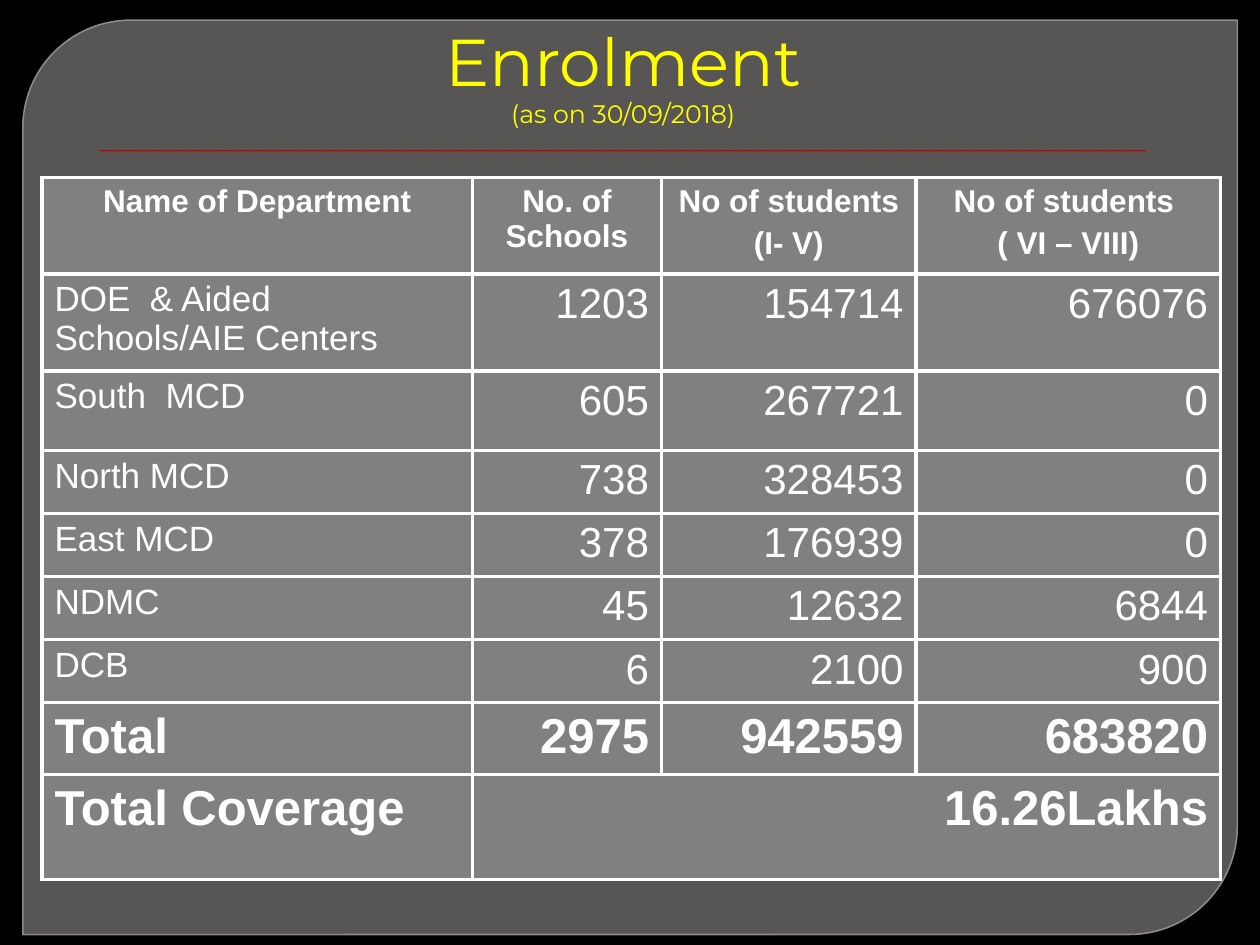
from lxml import etree
from pptx import Presentation
from pptx.dml.color import RGBColor
from pptx.enum import shapes as sh, text as tx
from pptx.oxml import ns
from pptx.util import Pt

BLACK = RGBColor(0, 0, 0)
WHITE = RGBColor(255, 255, 255)
YELLOW = RGBColor(255, 255, 0)
RED = RGBColor(0xC0, 0, 0)
GRAY = RGBColor(0x80, 0x80, 0x80)
PANEL = RGBColor(0x88, 0x84, 0x84)
EDGE = RGBColor(0x9D, 0x98, 0x98)

COLS = [246, 108, 145.5, 174]
ROWS = [55, 55.5, 45.5, 36, 36, 36, 36, 41, 60]
HEADS = ["Name of Department", "No. of Schools",
         "No of students\n(I- V)", "No of students \n( VI – VIII)"]
BODY = [
    ["DOE  & Aided Schools/AIE Centers", "1203", "154714", "676076"],
    ["South  MCD", "605", "267721", "0"],
    ["North MCD", "738", "328453", "0"],
    ["East MCD", "378", "176939", "0"],
    ["NDMC", "45", "12632", "6844"],
    ["DCB", "6", "2100", "900"],
]
TOTALS = [["Total", "2975", "942559", "683820"],
          ["Total Coverage", "16.26Lakhs", "", ""]]


def fade(fill, share):
    color = fill._xPr.find(".//" + ns.qn("a:srgbClr"))
    etree.SubElement(color, ns.qn("a:alpha"), val=str(share * 1000))


def style(font, size, color, name, bold=False):
    font.size = Pt(size)
    font.color.rgb = color
    font.name = name
    font.bold = bold


def add_panel(slide):
    panel = slide.shapes.add_shape(sh.MSO_SHAPE.ROUND_2_DIAG_RECTANGLE,
                                   Pt(13), Pt(11.5), Pt(694), Pt(522.5))
    panel.adjustments[0] = 0.118
    panel.adjustments[1] = 0
    panel.shadow.inherit = False
    panel.fill.solid()
    panel.fill.fore_color.rgb = PANEL
    fade(panel.fill, 65)
    panel.line.width = Pt(0.87)
    panel.line.color.rgb = EDGE
    fade(panel.line.fill, 88)


def add_title(slide):
    box = slide.shapes.add_textbox(Pt(30), Pt(24), Pt(648), Pt(68.5))
    frame = box.text_frame
    frame.word_wrap = True
    frame.vertical_anchor = tx.MSO_ANCHOR.BOTTOM
    para = frame.paragraphs[0]
    para.text = "Enrolment\v(as on 30/09/2018)\v" + "_" * 83
    para.alignment = tx.PP_ALIGN.CENTER
    para.line_spacing = 0.9
    para._p.get_or_add_pPr().set("marL", str(Pt(4.3)))
    looks = [(37.8, YELLOW), (14.4, YELLOW), (14.4, RED)]
    for run, (size, color) in zip(para.runs, looks):
        style(run.font, size, color, "Montserrat")
    for mark, (size, _) in zip(para._p.findall(ns.qn("a:br")), looks):
        etree.SubElement(mark, ns.qn("a:rPr"), sz=str(round(size * 100)))


def add_edges(cell):
    props = cell._tc.get_or_add_tcPr()
    for spot, side in enumerate(("lnL", "lnR", "lnT", "lnB")):
        line = etree.Element(ns.qn("a:" + side), w=str(Pt(2.25)))
        fill = etree.SubElement(line, ns.qn("a:solidFill"))
        etree.SubElement(fill, ns.qn("a:srgbClr"), val=str(WHITE))
        props.insert(spot, line)


def fill_cell(cell, words, size, bold, align):
    cell.fill.solid()
    cell.fill.fore_color.rgb = GRAY
    add_edges(cell)
    cell.text_frame.text = words
    for num, para in enumerate(cell.text_frame.paragraphs):
        para.alignment = align
        style(para.font, size, WHITE, "Arial", bold)
        for run in para.runs:
            style(run.font, size, WHITE, "Arial", bold)
        if num:
            para.space_before = Pt(size * 0.2)


def add_grid(slide):
    frame = slide.shapes.add_table(len(ROWS), len(COLS), Pt(24), Pt(101.5),
                                   Pt(sum(COLS)), Pt(sum(ROWS)))
    grid = frame.table
    for col, width in zip(grid.columns, COLS):
        col.width = Pt(width)
    for row, height in zip(grid.rows, ROWS):
        row.height = Pt(height)
    last = len(ROWS) - 1
    grid.cell(last, 1).merge(grid.cell(last, 3))
    left, mid, right = (tx.PP_ALIGN.LEFT, tx.PP_ALIGN.CENTER,
                        tx.PP_ALIGN.RIGHT)
    for r, line in enumerate([HEADS] + BODY + TOTALS):
        for c, words in enumerate(line):
            align = right if c else left
            if r == 0:
                size, bold, align = 18, True, mid
            elif r > len(BODY):
                size, bold = 28, True
            else:
                size, bold = (24 if c else 20), False
            fill_cell(grid.cell(r, c), words, size, bold, align)


def main():
    deck = Presentation()
    deck.slide_width, deck.slide_height = Pt(720), Pt(540)
    slide = deck.slides.add_slide(deck.slide_layouts[6])
    slide.background.fill.solid()
    slide.background.fill.fore_color.rgb = BLACK
    add_panel(slide)
    add_title(slide)
    add_grid(slide)
    deck.save("out.pptx")


if __name__ == "__main__":
    main()
